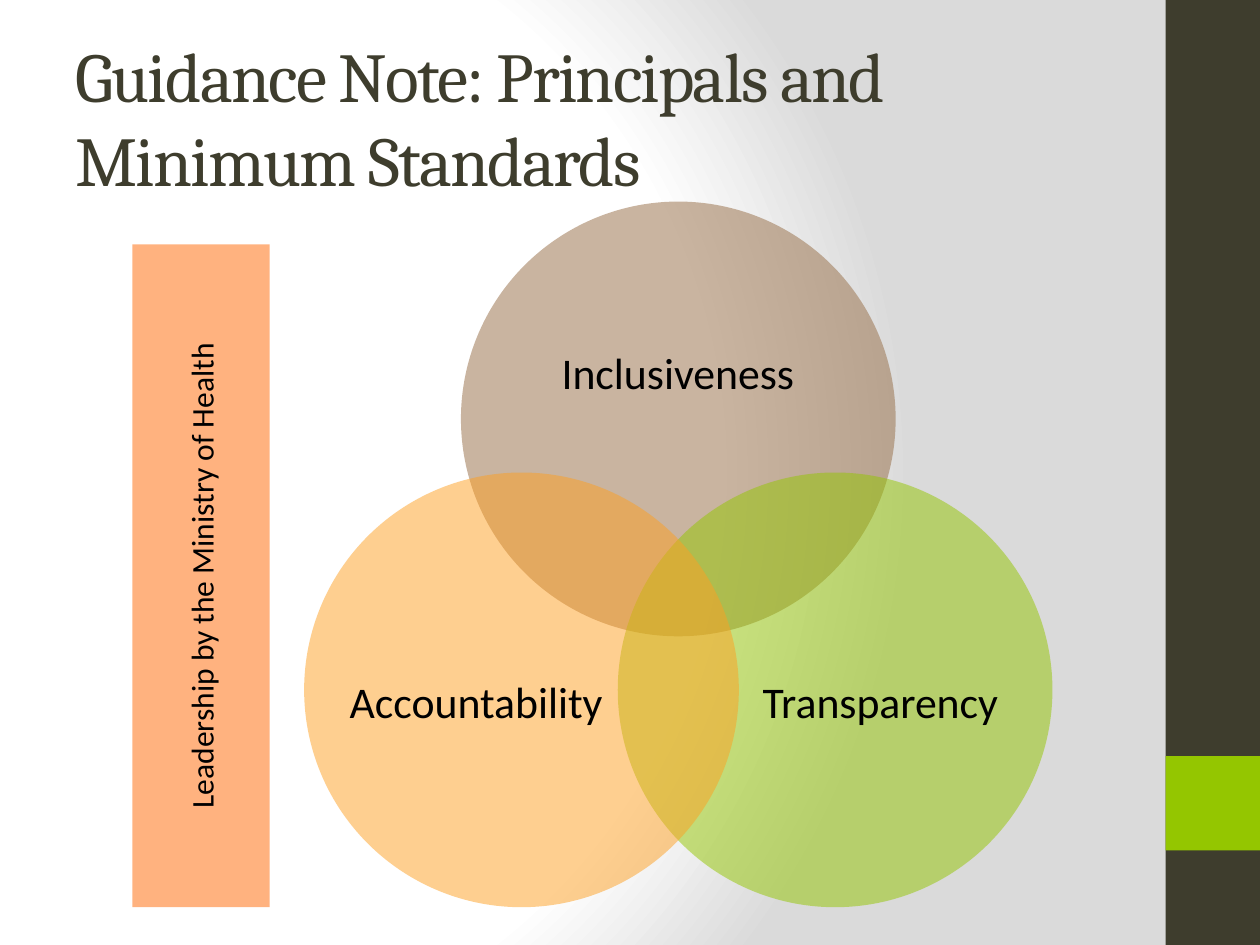
"""Build the guidance note slide with three overlapping principles."""
from dataclasses import dataclass
from typing import Optional

from pptx import Presentation
from pptx.dml.color import RGBColor
from pptx.enum.shapes import MSO_SHAPE
from pptx.enum.text import MSO_ANCHOR, PP_ALIGN
from pptx.oxml import parse_xml
from pptx.oxml.ns import nsdecls, qn
from pptx.oxml.xmlchemy import OxmlElement
from pptx.util import Pt

RECTANGLE, OVAL = MSO_SHAPE.RECTANGLE, MSO_SHAPE.OVAL
MIDDLE = MSO_ANCHOR.MIDDLE
LEFT, CENTER = PP_ALIGN.LEFT, PP_ALIGN.CENTER

DARK = RGBColor(0x3E, 0x3D, 0x2D)
GREEN = RGBColor(0x94, 0xC6, 0x00)
BROWN = RGBColor(0x95, 0x6B, 0x43)
AMBER = RGBColor(0xFE, 0xA0, 0x22)
ORANGE = RGBColor(0xFF, 0x67, 0x00)
BLACK = RGBColor(0x00, 0x00, 0x00)
WHITE = RGBColor(0xFF, 0xFF, 0xFF)
GREY = RGBColor(0xDA, 0xDA, 0xDA)

SLIDE_WIDTH, SLIDE_HEIGHT = 720, 540
SIDEBAR_LEFT, SIDEBAR_WIDTH = 666, 54
DIAMETER = 248.4
VENN_LEFT, VENN_TOP = 263.4, 115.2
SIDE_SHIFT, DROP = 89.6, 154.8

TITLE_FORMAT = {"name": "Cambria", "size": Pt(40)}
PRINCIPLE_FORMAT = {"name": "Calibri", "size": Pt(25)}
LEADERSHIP_FORMAT = {"name": "Calibri", "size": Pt(18)}


@dataclass(frozen=True)
class Box:
    """Left, top, width and height in points."""
    left: float
    top: float
    width: float
    height: float

    def lengths(self) -> list:
        """Return the four measures as slide lengths."""
        return [Pt(v) for v in (self.left, self.top, self.width, self.height)]


@dataclass(frozen=True)
class Principle:
    """A circle, shifted in steps from the top one, and its label area."""
    label: str
    color: RGBColor
    side: int
    down: int
    label_area: Box


PRINCIPLES = [
    Principle("Inclusiveness", BROWN, 0, 0, Box(32.8, 43.2, 182.2, 111.6)),
    Principle("Transparency", GREEN, 1, 1, Box(75.6, 64.1, 149, 136.8)),
    Principle("Accountability", AMBER, -1, 1, Box(23.8, 64.1, 149, 136.8)),
]


def paint_background(slide) -> None:
    """Fill the background with a circular gradient."""
    slide.background.fill.gradient()
    linear = next(slide.element.iter(qn("a:gradFill")))
    stops = "".join(
        f'<a:gs pos="{position * 1000}"><a:srgbClr val="{color}"/></a:gs>'
        for position, color in ((0, WHITE), (75, WHITE), (100, GREY))
    )
    circular = parse_xml(
        f'<a:gradFill {nsdecls("a")} rotWithShape="1"><a:gsLst>{stops}</a:gsLst>'
        '<a:path path="circle"><a:fillToRect l="20000" t="50000" '
        'r="100000" b="50000"/></a:path></a:gradFill>'
    )
    linear.getparent().replace(linear, circular)


def add_block(slide, kind, box: Box, color: RGBColor, opacity: Optional[int] = None):
    """Draw a borderless filled shape."""
    block = slide.shapes.add_shape(kind, *box.lengths())
    block.shadow.inherit = False
    block.fill.solid()
    block.fill.fore_color.rgb = color
    block.line.fill.background()
    if opacity is not None:
        alpha = OxmlElement("a:alpha")
        alpha.set("val", str(opacity * 1000))
        next(block.element.spPr.iter(qn("a:srgbClr"))).append(alpha)
    return block


def write(holder, text: str, font_format: dict, color: RGBColor, align):
    """Write one paragraph in the middle of a shape and return its run."""
    frame = holder.text_frame
    frame.word_wrap = True
    frame.vertical_anchor = MIDDLE
    paragraph = frame.paragraphs[0]
    paragraph.alignment = align
    run = paragraph.add_run()
    run.text = text
    for key, value in font_format.items():
        setattr(run.font, key, value)
    run.font.color.rgb = color
    return run


def add_principle(slide, principle: Principle) -> None:
    """Draw a translucent circle with its label."""
    left = VENN_LEFT + principle.side * SIDE_SHIFT
    top = VENN_TOP + principle.down * DROP
    add_block(slide, OVAL, Box(left, top, DIAMETER, DIAMETER), principle.color, 50)
    area = principle.label_area
    place = Box(left + area.left, top + area.top, area.width, area.height)
    label = slide.shapes.add_textbox(*place.lengths())
    for side in ("left", "top", "right", "bottom"):
        setattr(label.text_frame, f"margin_{side}", Pt(0))
    write(label, principle.label, PRINCIPLE_FORMAT, BLACK, CENTER)
    label.text_frame.paragraphs[0].line_spacing = 0.9


def main() -> None:
    """Assemble and save the slide."""
    deck = Presentation()
    deck.slide_width, deck.slide_height = Pt(SLIDE_WIDTH), Pt(SLIDE_HEIGHT)
    slide = deck.slides.add_slide(deck.slide_layouts[6])
    paint_background(slide)
    add_block(slide, RECTANGLE, Box(SIDEBAR_LEFT, 0, SIDEBAR_WIDTH, SLIDE_HEIGHT), DARK)
    add_block(slide, RECTANGLE, Box(SIDEBAR_LEFT, 432, SIDEBAR_WIDTH, SIDEBAR_WIDTH), GREEN)

    title = slide.shapes.add_textbox(*Box(36, 21.6, 600, 90).lengths())
    heading = write(title, "Guidance Note: Principals and Minimum Standards",
                    TITLE_FORMAT, DARK, LEFT)
    heading.font._element.set("spc", "-100")

    for principle in PRINCIPLES:
        add_principle(slide, principle)

    leadership = add_block(slide, RECTANGLE, Box(75.6, 139.7, 78.5, 378.7), ORANGE, 50)
    write(leadership, "Leadership by the Ministry of Health",
          LEADERSHIP_FORMAT, BLACK, CENTER)
    leadership.text_frame._txBody.bodyPr.set("vert", "vert270")
    deck.save("out.pptx")


if __name__ == "__main__":
    main()
